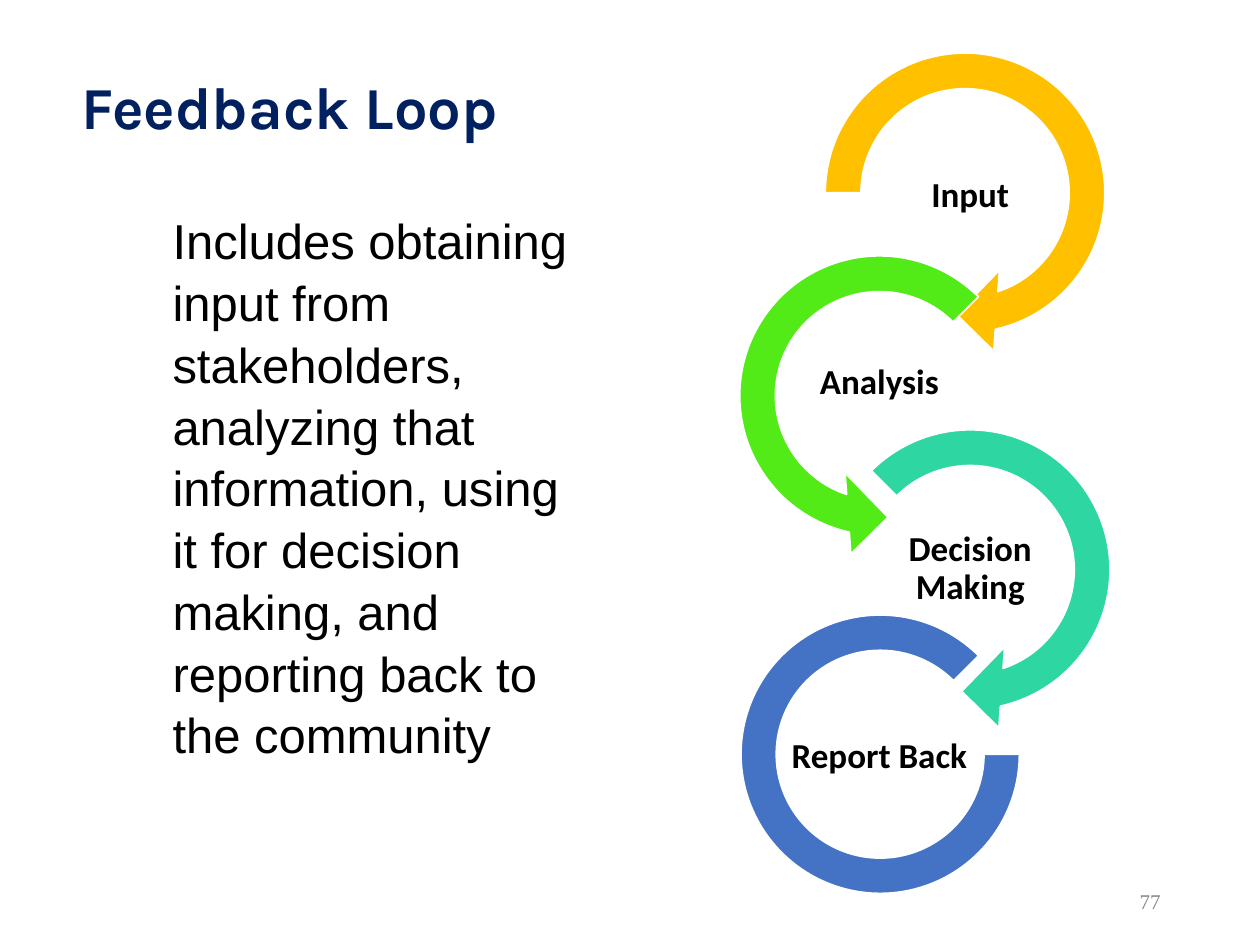
from pptx import Presentation
from pptx.dml.color import RGBColor
from pptx.enum.shapes import MSO_SHAPE
from pptx.enum.text import MSO_ANCHOR, MSO_AUTO_SIZE, PP_ALIGN
from pptx.oxml import parse_xml
from pptx.oxml.ns import nsdecls
from pptx.util import Pt

NAVY = RGBColor(0x00, 0x20, 0x60)
BLACK = RGBColor(0x00, 0x00, 0x00)
WHITE = RGBColor(0xFF, 0xFF, 0xFF)
GRAY = RGBColor(0x89, 0x89, 0x89)
AMBER = RGBColor(0xFF, 0xC0, 0x00)
GREEN = RGBColor(0x53, 0xEB, 0x17)
TEAL = RGBColor(0x2E, 0xD7, 0xA1)
BLUE = RGBColor(0x44, 0x72, 0xC4)

ARROW, BACK_ARROW, ARC = MSO_SHAPE.CIRCULAR_ARROW, MSO_SHAPE.LEFT_CIRCULAR_ARROW, MSO_SHAPE.BLOCK_ARC
RIGHT_LABEL, LEFT_LABEL = 502.6, 450.7
STAGES = [
    ("Input", RIGHT_LABEL, 86.4, ARROW, 458.6, 17.3, 185.8, (0.11, 11.42, 45, 108, 0.125), AMBER),
    ("Analysis", LEFT_LABEL, 193, BACK_ARROW, 409.7, 133.2, 185.8, (0.11, 11.42, 63, 189, 0.125), GREEN),
    ("Decision Making", RIGHT_LABEL, 299.5, ARROW, 461.5, 232.6, 185.8, (0.11, 11.42, 45, 135, 0.125), TEAL),
    ("Report Back", LEFT_LABEL, 406.8, ARC, 423.4, 351.4, 159.1, (0, 189, 0.127), BLUE),
]


class SlideBuilder:
    """Hold the style and the current slide, and add elements to it."""

    label_font = "Calibri"
    label_size = 20
    label_box = (103.7, 51.8)

    def __init__(self, prs):
        self.s = prs.slides.add_slide(prs.slide_layouts[1])

    def place(self, sp, left, top, width, height):
        sp.left, sp.top, sp.width, sp.height = Pt(left), Pt(top), Pt(width), Pt(height)

    def set_text(self, sp, text, font, size, color, bold=False, align=PP_ALIGN.LEFT,
                 spacing=1.0, anchor=MSO_ANCHOR.MIDDLE):
        tf = sp.text_frame
        tf.text = text
        tf.word_wrap = True
        tf.auto_size = MSO_AUTO_SIZE.NONE
        tf.vertical_anchor = anchor
        p = tf.paragraphs[0]
        p.alignment = align
        p.line_spacing = spacing
        p.space_before = Pt(0)
        r = p.runs[0]
        r.font.name, r.font.size, r.font.bold = font, Pt(size), bold
        r.font.color.rgb = color
        return p

    def title(self, text):
        sp = self.s.shapes.title
        self.place(sp, 39.6, 10.8, 583.2, 104.4)
        self.set_text(sp, text, "Karla", 34, NAVY, bold=True, spacing=0.9)

    def body(self, text):
        sp = self.s.placeholders[1]
        self.place(sp, 91.4, 115.2, 239.8, 367.9)
        p = self.set_text(sp, text, "Arial", 28, BLACK, spacing=1.05, anchor=MSO_ANCHOR.TOP)
        pPr = p._p.get_or_add_pPr()
        pPr.set("marL", "0")
        pPr.set("indent", "0")
        pPr.append(parse_xml(f"<a:buNone {nsdecls('a')}/>"))

    def ring(self, kind, left, top, size, adjustments, color):
        sp = self.s.shapes.add_shape(kind, Pt(left), Pt(top), Pt(size), Pt(size))
        for i, value in enumerate(adjustments):
            sp.adjustments[i] = value
        sp.shadow.inherit = False
        sp.fill.solid()
        sp.fill.fore_color.rgb = color
        sp.line.color.rgb = WHITE
        sp.line.width = Pt(1)

    def label(self, text, left, top):
        width, height = self.label_box
        sp = self.s.shapes.add_textbox(Pt(left), Pt(top), Pt(width), Pt(height))
        tf = sp.text_frame
        tf.margin_left = tf.margin_right = tf.margin_top = tf.margin_bottom = Pt(0.7)
        self.set_text(sp, text, self.label_font, self.label_size, BLACK, bold=True,
                      align=PP_ALIGN.CENTER, spacing=0.9)

    def page_number(self, text):
        sp = self.s.shapes.add_textbox(Pt(508.3), Pt(500.4), Pt(162), Pt(28.8))
        self.set_text(sp, text, "Times New Roman", 12, GRAY, align=PP_ALIGN.RIGHT)


def main():
    prs = Presentation()
    prs.slide_width, prs.slide_height = Pt(720), Pt(540)
    slide = SlideBuilder(prs)
    slide.title("Feedback Loop")
    slide.body("Includes obtaining input from stakeholders, analyzing that information, "
               "using it for decision making, and reporting back to the community")
    for text, label_left, label_top, *ring in STAGES:
        slide.ring(*ring)
        slide.label(text, label_left, label_top)
    slide.page_number("77")
    prs.save("out.pptx")


if __name__ == "__main__":
    main()
